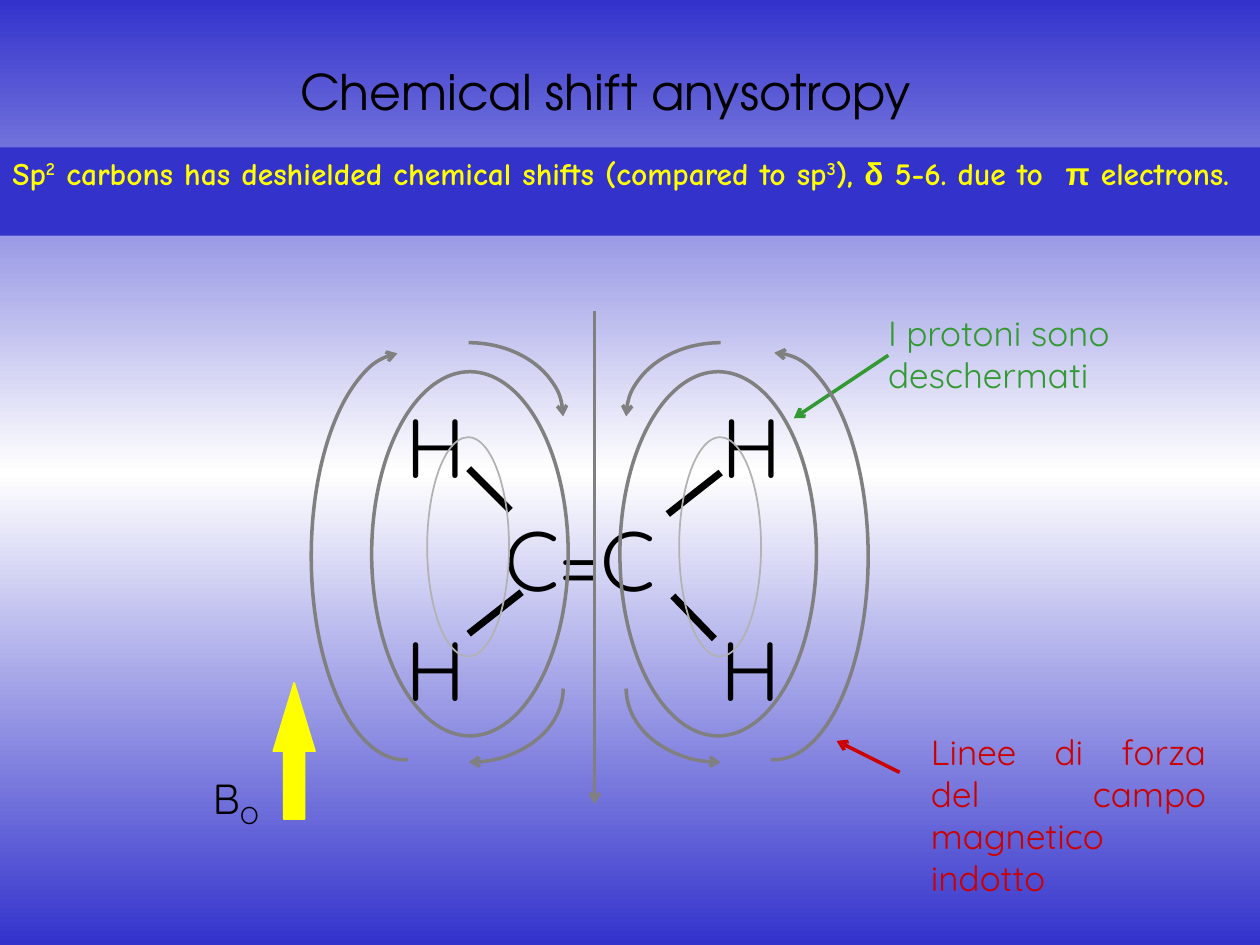
from copy import deepcopy

from lxml import etree
from pptx import Presentation
from pptx import util as u
from pptx.dml.color import RGBColor
from pptx.enum import shapes, text
from pptx.oxml.ns import qn

COLORS = {
    "blue": "3333CC", "white": "FFFFFF", "yellow": "FFFF00", "black": "000000",
    "light": "B2B2B2", "gray": "808080", "green": "339933", "red": "CC0000",
}
RGB = {name: RGBColor.from_string(value) for name, value in COLORS.items()}
SHAPE = shapes.MSO_SHAPE
ALIGN = text.PP_ALIGN


def style_line(sp, color, width, arrow=None):
    sp.line.color.rgb = RGB[color]
    sp.line.width = u.Pt(width)
    if arrow:
        end = etree.SubElement(sp.line._get_or_add_ln(), qn(f"a:{arrow}"))
        end.set("type", "arrow")
    if sp.shape_type == shapes.MSO_SHAPE_TYPE.LINE:
        etree.SubElement(sp._element.spPr, qn("a:effectLst"))
    else:
        sp.shadow.inherit = False


def write(sp, runs, size, color, align=ALIGN.LEFT, wrap=True, bold=False):
    tf = sp.text_frame
    frame = {"word_wrap": wrap, "vertical_anchor": text.MSO_ANCHOR.TOP}
    for name, value in frame.items():
        setattr(tf, name, value)
    p = tf.paragraphs[0]
    p.alignment = align
    for content, font, baseline in runs:
        r = p.add_run()
        r.text = content
        for name, value in {"name": font, "size": u.Pt(size), "bold": bold}.items():
            setattr(r.font, name, value)
        r.font.color.rgb = RGB[color]
        if baseline:
            r.font._element.set("baseline", str(baseline * 1000))


prs = Presentation()
prs.slide_width, prs.slide_height = u.Inches(10), u.Inches(7.5)
s = prs.slides.add_slide(prs.slide_layouts[6])

fill = s.background.fill
fill.gradient()
fill.gradient_angle = 90
stops = next(s._element.iter(qn("a:gsLst")))
stops.append(deepcopy(stops[0]))
for stop, position, color in zip(fill.gradient_stops, (0, 0.5, 1), ("blue", "white", "blue")):
    stop.position = position
    stop.color.rgb = RGB[color]

banner = s.shapes.add_shape(SHAPE.RECTANGLE, *map(u.Inches, (0, 1.17, 10, 0.7)))
banner.shadow.inherit = False
banner.fill.solid()
banner.fill.fore_color.rgb = RGB["blue"]
banner.line.fill.background()
comic = "Comic Neue"
write(banner, [
    ("Sp", comic, 0), ("2", comic, 30),
    (" carbons has deshielded chemical shifts (compared to sp", comic, 0),
    ("3", comic, 30), ("), ", comic, 0), ("δ", "Arial", 0),
    (" 5-6. due to  ", comic, 0), ("π", "Arial", 0), (" electrons.", comic, 0),
], 18, "yellow", ALIGN.JUSTIFY, bold=True)

quick = "Quicksand"
labels = [
    ((0.83, 0.44, 7.95, 0.57), [("Chemical shift anysotropy", "TeX Gyre Adventor", 0)],
     28, "black", ALIGN.CENTER, True),
    ((3.91, 3.98, 1.56, 0.9), [("C=C", quick, 0)], 48, "black", ALIGN.LEFT, False),
    ((1.59, 6.08, 0.57, 0.56), [("B", quick, 0), ("O", quick, -25)],
     24, "black", ALIGN.LEFT, False),
    ((6.95, 2.42, 2.3, 0.77), [("I protoni sono deschermati", quick, 0)],
     20, "green", ALIGN.LEFT, True),
    ((7.29, 5.75, 2.38, 1.44), [("Linee di forza del campo magnetico indotto", quick, 0)],
     20, "red", ALIGN.JUSTIFY, True),
]
for left, top in ((3.12, 3.08), (5.63, 3.08), (3.12, 4.85), (5.62, 4.85)):
    labels.append(((left, top, 0.68, 0.9), [("H", quick, 0)], 48, "black", ALIGN.LEFT, False))
for box, runs, size, color, align, wrap in labels:
    sp = s.shapes.add_textbox(*map(u.Inches, box))
    write(sp, runs, size, color, align, wrap)

lines = [
    ((5.3, 4.08, 5.72, 3.75), "black", 4, None),
    ((3.72, 5.03, 4.14, 4.7), "black", 4, None),
    ((4.05, 4.05, 3.72, 3.72), "black", 4, None),
    ((5.67, 5.07, 5.34, 4.73), "black", 4, None),
    ((4.72, 2.47, 4.72, 6.38), "gray", 2, "tailEnd"),
    ((7.05, 2.82, 6.3, 3.32), "green", 2, "tailEnd"),
    ((7.14, 6.13, 6.64, 5.88), "red", 2, "tailEnd"),
]
for ends, color, width, arrow in lines:
    line = s.shapes.add_connector(shapes.MSO_CONNECTOR.STRAIGHT, *map(u.Inches, ends))
    style_line(line, color, width, arrow)

loops = [
    ((3.39, 3.47, 0.65, 1.74), "light", 1),
    ((5.39, 3.47, 0.65, 1.74), "light", 1),
    ((2.95, 2.95, 1.56, 2.89), "gray", 2),
    ((4.92, 2.95, 1.56, 2.89), "gray", 2),
]
for box, color, width in loops:
    loop = s.shapes.add_shape(SHAPE.OVAL, *map(u.Inches, box))
    loop.fill.background()
    style_line(loop, color, width)

arcs = [
    ((2.47, 2.8, 1.48, 3.23), 89, 268, "tailEnd"),
    ((5.4, 2.8, 1.49, 3.23), 270, 91, "headEnd"),
    ((2.97, 4.88, 1.5, 1.17), 0, 90, "tailEnd"),
    ((4.97, 4.88, 1.5, 1.17), 90, 180, "headEnd"),
    ((4.97, 2.72, 1.5, 1.17), 180, 270, "headEnd"),
    ((2.97, 2.72, 1.5, 1.17), 270, 0, "tailEnd"),
]
for box, start, end, arrow in arcs:
    arc = s.shapes.add_shape(SHAPE.ARC, *map(u.Inches, box))
    for i, angle in enumerate((start, end)):
        arc.adjustments[i] = angle * 0.6
    arc.fill.background()
    style_line(arc, "gray", 2, arrow)

field = s.shapes.add_shape(SHAPE.UP_ARROW, *map(u.Inches, (2.17, 5.42, 0.33, 1.08)))
field.adjustments[1] = 1.64
field.fill.solid()
field.fill.fore_color.rgb = RGB["yellow"]
style_line(field, "yellow", 1)

prs.save("out.pptx")
